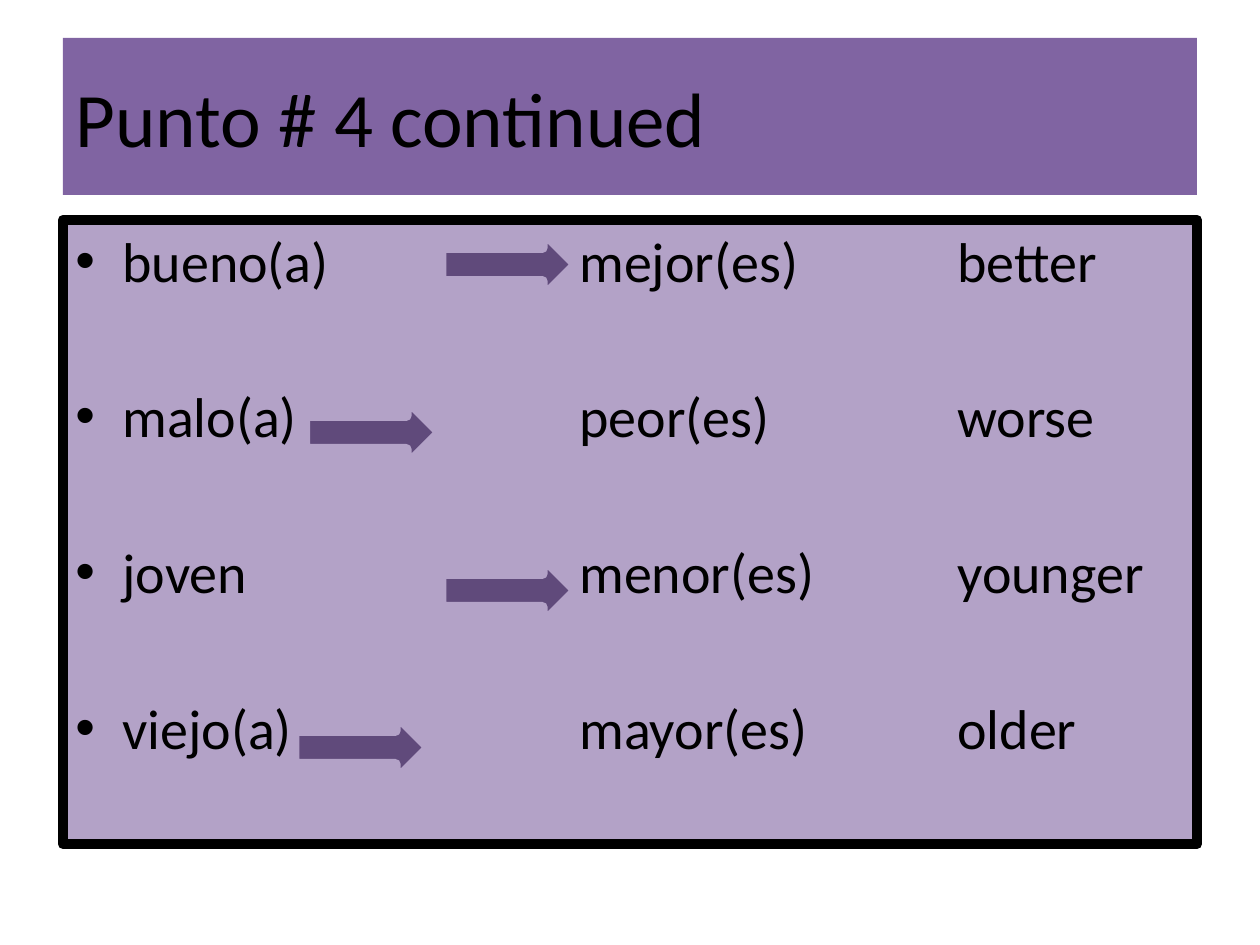
from pptx import Presentation
from pptx.dml.color import RGBColor
from pptx.enum.shapes import MSO_SHAPE
from pptx.enum.text import MSO_ANCHOR, PP_ALIGN
from pptx.oxml.ns import qn
from pptx.util import Emu, Pt
from lxml.etree import SubElement


def px(length):
    return Emu(round(length * 914400 / 126))


def add_block(kind, left, top, width, height, fill, line=None):
    block = slide.shapes.add_shape(kind, px(left), px(top), px(width), px(height))
    block.shadow.inherit = False
    block.fill.solid()
    block.fill.fore_color.rgb = RGBColor.from_string(fill)
    if line:
        block.line.color.rgb = RGBColor.from_string(line)
        block.line.width = Pt(6)
    else:
        block.line.fill.background()
    return block


prs = Presentation()
prs.slide_width, prs.slide_height = px(1260), px(945)
slide = prs.slides.add_slide(prs.slide_layouts[6])

title = add_block(MSO_SHAPE.RECTANGLE, 63, 38, 1134, 157, "8064A2")
title.text_frame.text = "Punto # 4 continued"
title.text_frame.vertical_anchor = MSO_ANCHOR.MIDDLE

comparisons = add_block(MSO_SHAPE.RECTANGLE, 63, 220, 1134, 624, "B3A2C7", "000000")
comparisons.text_frame.text = "\n".join([
    "bueno(a)\t\tmejor(es)\t\tbetter",
    "malo(a)\t\t\tpeor(es)\t\tworse",
    "joven\t\t\tmenor(es)\t\tyounger",
    "viejo(a)\t\t\tmayor(es)\t\tolder",
])
comparisons.text_frame.vertical_anchor = MSO_ANCHOR.TOP

for block, size in [(title, 44), (comparisons, 32)]:
    block.text_frame.word_wrap = True
    for paragraph in block.text_frame.paragraphs:
        paragraph.alignment = PP_ALIGN.LEFT
        for run in paragraph.runs:
            run.font.name = "Calibri"
            run.font.size = Pt(size)
            run.font.color.rgb = RGBColor.from_string("000000")

for row, paragraph in enumerate(comparisons.text_frame.paragraphs):
    paragraph.space_before = Pt(50.5 if row else 0)
    properties = paragraph._p.get_or_add_pPr()
    properties.set("marL", str(px(47)))
    properties.set("indent", str(-px(47)))
    properties.set("defTabSz", str(px(126)))
    SubElement(properties, qn("a:buFont"), typeface="Arial")
    SubElement(properties, qn("a:buChar"), char="•")

for left, top in [(441, 231), (305, 399), (441, 557), (294, 714)]:
    add_block(MSO_SHAPE.RIGHT_ARROW, left, top, 135, 67, "604A7B", "B3A2C7")

prs.save("out.pptx")
